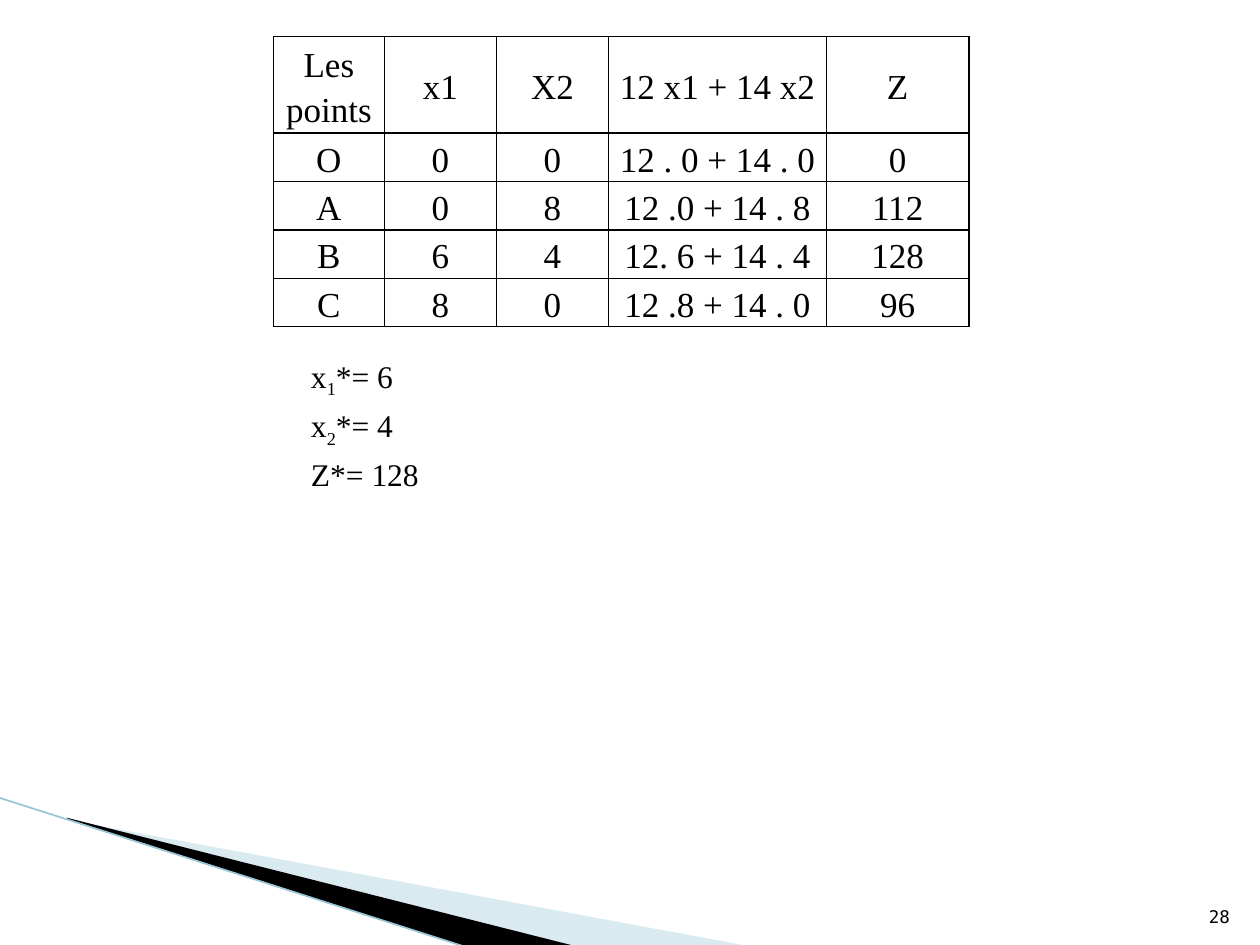
from lxml.etree import SubElement
from pptx import Presentation
from pptx.dml.color import RGBColor
from pptx.enum.shapes import MSO_CONNECTOR
from pptx.enum.text import MSO_ANCHOR, MSO_AUTO_SIZE, PP_ALIGN
from pptx.oxml.ns import qn
from pptx.util import Inches, Pt

COLORS = {"ink": "000000", "pale": "A0CBDC", "edge": "97C5D8"}
SERIF, MONO = "Times New Roman", "DejaVu Sans Mono"
ROWS = [
    ["Les points", "x1", "X2", "12 x1 + 14 x2", "Z"],
    ["O", "0", "0", "12 . 0 + 14 . 0", "0"],
    ["A", "0", "8", "12 .0 + 14 . 8", "112"],
    ["B", "6", "4", "12. 6 + 14 . 4", "128"],
    ["C", "8", "0", "12 .8 + 14 . 0", "96"],
]
RESULT = [
    [("x", False), ("1", True), ("*= 6", False)],
    [("x", False), ("2", True), ("*= 4", False)],
    [("Z*= 128", False)],
]


def grid(*cells):
    """Turn grid units, 100 columns by 75 rows, into lengths."""
    return [Inches(cell / 10) for cell in cells]


def color(name):
    """Return a named colour."""
    return RGBColor.from_string(COLORS[name])


class Deck:
    """Hold the style and the current slide."""

    def __init__(self):
        """Start a deck with one blank slide."""
        self.prs = Presentation()
        self.prs.slide_width, self.prs.slide_height = grid(100, 75)
        self.slide = self.prs.slides.add_slide(self.prs.slide_layouts[6])
        self.shapes = self.slide.shapes

    def run(self, para, text, size, face=SERIF, sub=False):
        """Add one styled run to a paragraph."""
        run = para.add_run()
        run.text = text
        run.font.size, run.font.name = Pt(size), face
        run.font.color.rgb = color("ink")
        if sub:
            run._r.get_or_add_rPr().set("baseline", "-25000")

    def wedge(self, points, fill, alpha=100):
        """Draw a filled outline without a line."""
        start, *rest = [grid(*point) for point in points]
        pen = self.shapes.build_freeform(*start)
        pen.add_line_segments(rest, close=True)
        shape = pen.convert_to_shape()
        shape.shadow.inherit = False
        shape.fill.solid()
        shape.fill.fore_color.rgb = color(fill)
        shape.line.fill.background()
        if alpha < 100:
            tone = shape._element.spPr.find(".//" + qn("a:srgbClr"))
            SubElement(tone, qn("a:alpha"), val=str(alpha * 1000))

    def line(self, start, end, name, width):
        """Draw a straight line."""
        line = self.shapes.add_connector(
            MSO_CONNECTOR.STRAIGHT, *grid(*start), *grid(*end))
        line.line.color.rgb = color(name)
        line.line.width = Pt(width)
        SubElement(line._element.spPr, qn("a:effectLst"))

    def text(self, box, paras, size, face=SERIF, indent=0, space=1,
             align=PP_ALIGN.LEFT, anchor=MSO_ANCHOR.TOP, grow=False):
        """Add a text box from lists of text and subscript pairs."""
        frame = self.shapes.add_textbox(*grid(*box)).text_frame
        frame.word_wrap = True
        frame.vertical_anchor = anchor
        if grow:
            frame.auto_size = MSO_AUTO_SIZE.SHAPE_TO_FIT_TEXT
        for num, parts in enumerate(paras):
            para = frame.add_paragraph() if num else frame.paragraphs[0]
            para.alignment, para.line_spacing = align, space
            para._p.get_or_add_pPr().set("marL", str(grid(indent)[0]))
            for part, sub in parts:
                self.run(para, part, size, face, sub)
        if grow:
            para.space_after = Pt(10)

    def border(self, cell, width):
        """Line all four sides of a table cell."""
        props = cell._tc.get_or_add_tcPr()
        for side in ("lnL", "lnR", "lnT", "lnB"):
            edge = SubElement(props, qn("a:" + side), w=str(Pt(width)))
            fill = SubElement(edge, qn("a:solidFill"))
            SubElement(fill, qn("a:srgbClr"), val=COLORS["ink"])

    def table(self, spot, rows, wide, high, size):
        """Add a plain ruled table."""
        frame = self.shapes.add_table(
            len(rows), len(wide), *grid(*spot, sum(wide), sum(high)))
        table = frame.table
        table.first_row = table.horz_banding = False
        for col, width in zip(table.columns, grid(*wide)):
            col.width = width
        for row, height, words in zip(table.rows, grid(*high), rows):
            row.height = height
            for cell, word in zip(row.cells, words):
                self.border(cell, 1)
                cell.fill.background()
                cell.margin_left = cell.margin_right = Inches(0.07)
                cell.margin_top = cell.margin_bottom = 0
                cell.vertical_anchor = MSO_ANCHOR.MIDDLE
                para = cell.text_frame.paragraphs[0]
                para.alignment, para.line_spacing = PP_ALIGN.CENTER, 1.15
                self.run(para, word, size)


def main():
    """Build and save the slide."""
    deck = Deck()
    deck.wedge([(5.5, 65.1), (59.5, 75.1), (45.6, 75.1), (5.5, 65)], "pale", 40)
    deck.wedge([(5.3, 64.9), (45.7, 75.1), (37.2, 75.2), (5.4, 65)], "ink")
    deck.line((-0.1, 63.3), (37.1, 75.2), "edge", 0.95)
    deck.text((94.6, 70.1, 4, 4), [[("28", False)]], 10, MONO,
              align=PP_ALIGN.RIGHT, anchor=MSO_ANCHOR.BOTTOM)
    deck.table((21.7, 2.9), ROWS, [8.8, 8.9, 8.9, 17.3, 11.3],
               [7.1] + [3.54] * 4, 20)
    deck.text((21.7, 27.3, 50, 11.5), RESULT, 18, indent=2, space=1.15,
              grow=True)
    deck.prs.save("out.pptx")


if __name__ == "__main__":
    main()
